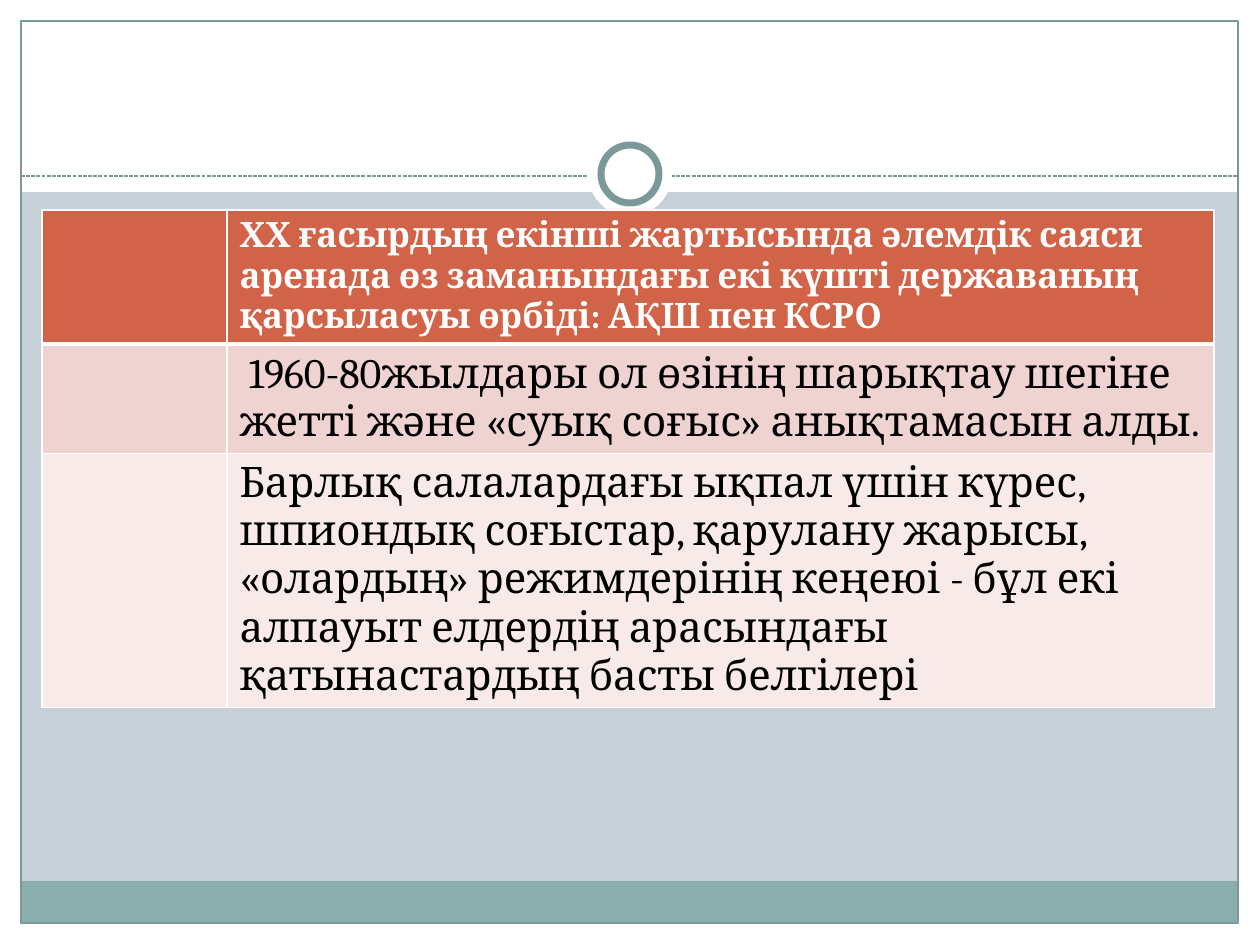
from dataclasses import dataclass
from typing import Optional

import pptx
import pptx.dml.color
import pptx.enum.dml
import pptx.enum.shapes
import pptx.oxml
import pptx.oxml.ns
import pptx.util

EMU_PER_PX = 914400 / 126
SHAPE = pptx.enum.shapes.MSO_SHAPE


@dataclass(frozen=True)
class Theme:
    background: str = "C5D1D7"
    white: str = "FFFFFF"
    black: str = "000000"
    footer: str = "8CADAE"
    frame: str = "7C999A"
    header: str = "D16349"
    font: str = "Cambria"
    header_size: int = 20
    body_size: int = 24
    thin: float = 0.75
    ring: float = 4
    grid: float = 1
    header_rule: float = 3


THEME = Theme()


@dataclass(frozen=True)
class Panel:
    left: int
    top: int
    width: int
    height: int
    fill: Optional[str] = None
    line: Optional[str] = None
    weight: float = THEME.thin
    kind: SHAPE = SHAPE.RECTANGLE


@dataclass(frozen=True)
class Row:
    text: str
    height: int
    fill: str
    color: str = THEME.black
    size: int = THEME.body_size
    bold: bool = False


BACK_PANELS = [
    Panel(0, 924, 1260, 21, THEME.white),
    Panel(0, 0, 1260, 192, THEME.white),
    Panel(0, 0, 21, 945, THEME.white),
    Panel(1239, 0, 21, 945, THEME.white),
    Panel(21, 881, 1217, 43, THEME.footer),
    Panel(21, 21, 1217, 902, line=THEME.frame),
]
CIRCLES = [
    Panel(588, 132, 84, 84, THEME.white, kind=SHAPE.OVAL),
    Panel(601, 145, 58, 58, THEME.white, THEME.frame, THEME.ring, SHAPE.OVAL),
]
COLUMNS = [185, 987]
ROWS = [
    Row("ХХ ғасырдың екінші жартысында әлемдік саяси аренада өз заманындағы "
        "екі күшті державаның қарсыласуы өрбіді: АҚШ пен КСРО",
        134, THEME.header, THEME.white, THEME.header_size, True),
    Row(" 1960-80жылдары ол өзінің шарықтау шегіне жетті және «суық соғыс» "
        "анықтамасын алды.", 109, "EED3D0"),
    Row("Барлық салалардағы ықпал үшін күрес, шпиондық соғыстар, қарулану "
        "жарысы, «олардың» режимдерінің кеңеюі - бұл екі алпауыт елдердің "
        "арасындағы қатынастардың басты белгілері", 254, "F7EAE9"),
]


def px(n: int) -> pptx.util.Emu:
    return pptx.util.Emu(round(n * EMU_PER_PX))


def rgb(color: str) -> pptx.dml.color.RGBColor:
    return pptx.dml.color.RGBColor.from_string(color)


def paint(fill, color: str) -> None:
    fill.solid()
    fill.fore_color.rgb = rgb(color)


def add_panel(s, panel: Panel) -> None:
    sp = s.shapes.add_shape(panel.kind, px(panel.left), px(panel.top),
                            px(panel.width), px(panel.height))
    sp.shadow.inherit = False
    if panel.fill:
        paint(sp.fill, panel.fill)
    else:
        sp.fill.background()
    if panel.line:
        paint(sp.line.fill, panel.line)
        sp.line.width = pptx.util.Pt(panel.weight)
    else:
        sp.line.fill.background()


def add_dashed_rule(s, left: int, right: int, y: int) -> None:
    cxn = s.shapes.add_connector(pptx.enum.shapes.MSO_CONNECTOR.STRAIGHT,
                                 px(left), px(y), px(right), px(y))
    paint(cxn.line.fill, THEME.frame)
    cxn.line.width = pptx.util.Pt(THEME.thin)
    cxn.line.dash_style = pptx.enum.dml.MSO_LINE.SQUARE_DOT
    effects = pptx.oxml.parse_xml(
        f"<a:effectLst {pptx.oxml.ns.nsdecls('a')}/>")
    cxn._element.spPr.append(effects)


def set_borders(cell, top: float, bottom: float) -> None:
    """Draw white cell borders; the sides take the grid weight."""
    weights = {"L": THEME.grid, "R": THEME.grid, "T": top, "B": bottom}
    props = cell._tc.get_or_add_tcPr()
    for i, (side, weight) in enumerate(weights.items()):
        props.insert(i, pptx.oxml.parse_xml(
            f'<a:ln{side} {pptx.oxml.ns.nsdecls("a")} '
            f'w="{pptx.util.Pt(weight)}"><a:solidFill>'
            f'<a:srgbClr val="{THEME.white}"/></a:solidFill></a:ln{side}>'))


def add_text(cell, row: Row) -> None:
    p = cell.text_frame.paragraphs[0]
    p.text = row.text
    p.font.name = THEME.font
    p.font.size = pptx.util.Pt(row.size)
    p.font.bold = row.bold
    p.font.color.rgb = rgb(row.color)


def add_facts_table(s, left: int, top: int) -> None:
    height = sum(row.height for row in ROWS)
    table = s.shapes.add_table(len(ROWS), len(COLUMNS), px(left), px(top),
                               px(sum(COLUMNS)), px(height)).table
    table.first_row = table.horz_banding = False
    for column, width in zip(table.columns, COLUMNS):
        column.width = px(width)
    for i, row in enumerate(ROWS):
        table.rows[i].height = px(row.height)
        for cell in table.rows[i].cells:
            paint(cell.fill, row.fill)
            set_borders(cell,
                        top=THEME.header_rule if i == 1 else THEME.grid,
                        bottom=THEME.header_rule if i == 0 else THEME.grid)
        add_text(table.cell(i, 1), row)


def main() -> None:
    prs = pptx.Presentation()
    prs.slide_width, prs.slide_height = px(1260), px(945)
    s = prs.slides.add_slide(prs.slide_layouts[6])
    paint(s.background.fill, THEME.background)
    for panel in BACK_PANELS:
        add_panel(s, panel)
    add_dashed_rule(s, 21, 1239, 176)
    for circle in CIRCLES:
        add_panel(s, circle)
    add_facts_table(s, 42, 210)
    prs.save("out.pptx")


if __name__ == "__main__":
    main()
